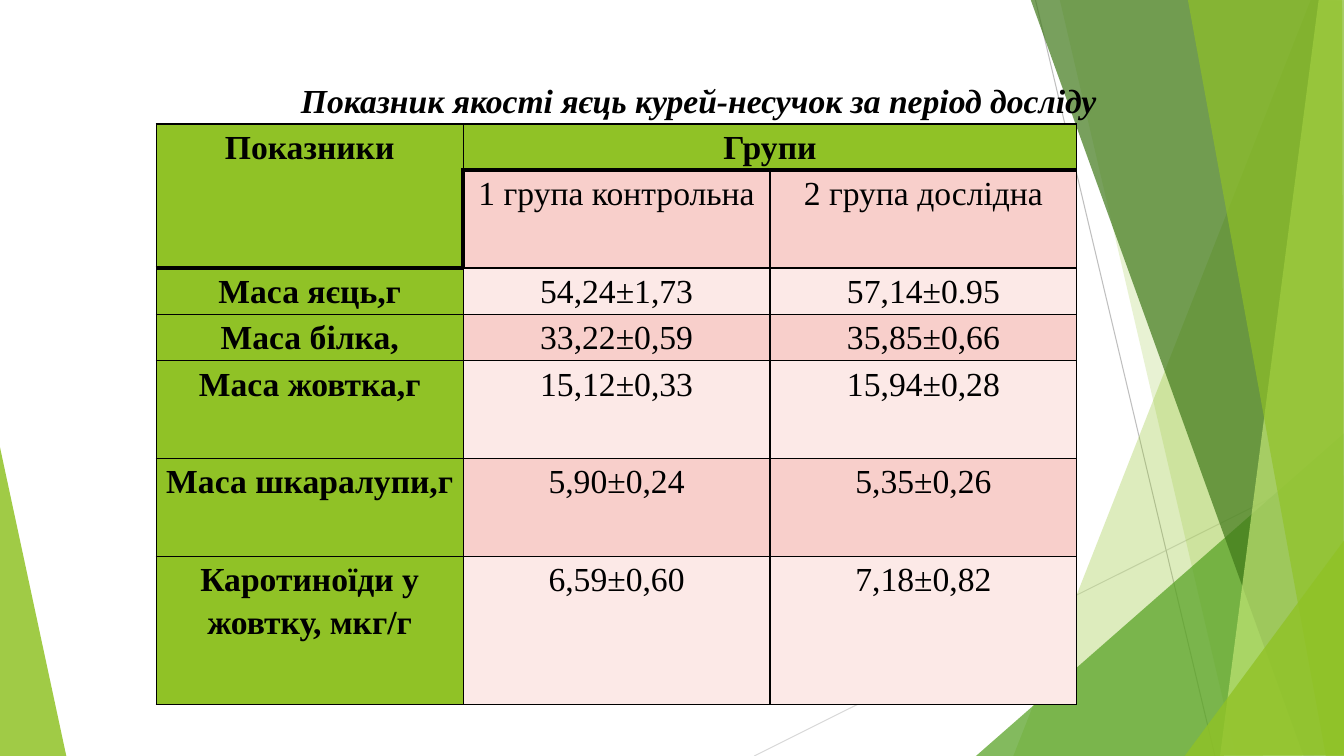
from lxml import etree
from pptx import Presentation
from pptx.dml.color import RGBColor
from pptx.enum.shapes import MSO_CONNECTOR
from pptx.enum.text import MSO_ANCHOR, MSO_AUTO_SIZE, PP_ALIGN
from pptx.oxml import parse_xml
from pptx.oxml.ns import nsdecls, qn
from pptx.util import Inches, Pt

BLACK = RGBColor(0x00, 0x00, 0x00)
LIME = RGBColor(0x90, 0xC2, 0x26)
GREEN = RGBColor(0x54, 0xA0, 0x21)
DARK_GREEN = RGBColor(0x3F, 0x78, 0x19)
PALE_LIME = RGBColor(0xC0, 0xE4, 0x74)
PINK = RGBColor(0xF8, 0xCF, 0xCB)
PALE_PINK = RGBColor(0xFC, 0xE9, 0xE7)
LIGHT_GREY = RGBColor(0xD9, 0xD9, 0xD9)
GREY = RGBColor(0xBF, 0xBF, 0xBF)
FONT = {"name": "Times New Roman", "size": Pt(24)}

deck = Presentation()
deck.slide_width, deck.slide_height = Inches(13.33), Inches(7.5)
page = deck.slides.add_slide(deck.slide_layouts[5])


def add_facet(points, color, opacity):
    corners = [(Inches(x), Inches(y)) for x, y in points]
    builder = page.shapes.build_freeform(*corners[0])
    builder.add_line_segments(corners[1:], close=True)
    facet = builder.convert_to_shape()
    facet.shadow.inherit = False
    facet.line.fill.background()
    facet.fill.solid()
    facet.fill.fore_color.rgb = color
    tint = facet.element.spPr.find(qn("a:solidFill"))[0]
    etree.SubElement(tint, qn("a:alpha"), val=str(opacity * 1000))


def style_text(frame, text, **style):
    para = frame.paragraphs[0]
    para.alignment = PP_ALIGN.CENTER
    span = para.add_run()
    span.text = text
    span.font.color.rgb = BLACK
    for name, value in {**FONT, **style}.items():
        setattr(span.font, name, value)
    return para


# Left facet and the thin lines behind the right-hand facets
add_facet([(-0.01, 4.39), (0.66, 7.51), (-0.01, 7.5)], LIME, 85)
for x1, y1, x2, y2, color in [
    (7.48, 7.5, 13.35, 4.57, LIGHT_GREY),
    (10.27, 0, 12.05, 7.5, GREY),
]:
    ray = page.shapes.add_connector(
        MSO_CONNECTOR.STRAIGHT, Inches(x1), Inches(y1), Inches(x2), Inches(y2))
    ray.line.color.rgb = color
    ray.line.width = Pt(0.75)
    etree.SubElement(ray.element.spPr, qn("a:effectLst"))

# Right-hand facets
for points, color, opacity in [
    ([(13, 0), (10.05, 7.5), (13.36, 7.51), (13.35, 0.01)], LIME, 30),
    ([(10.51, -0.01), (12.26, 7.5), (13.35, 7.5), (13.35, -0.01)], LIME, 20),
    ([(9.68, 7.5), (13.34, 4.29), (13.34, 7.5)], GREEN, 72),
    ([(10.22, -0.01), (12.93, 7.5), (13.35, 7.49), (13.35, -0.01)], DARK_GREEN, 70),
    ([(13.08, -0.01), (12.1, 7.5), (13.35, 7.5), (13.34, -0.01)], PALE_LIME, 70),
    ([(11.78, -0.01), (13.15, 7.5), (13.33, 7.5), (13.31, -0.01)], LIME, 65),
    ([(11.75, 7.5), (13.34, 5.35), (13.35, 7.49)], LIME, 80),
]:
    add_facet(points, color, opacity)

# Egg quality table
rows = [
    ("Показники", "Групи", ""),
    ("", "1 група контрольна", "2 група дослідна"),
    ("Маса яєць,г", "54,24±1,73", "57,14±0.95"),
    ("Маса білка,", "33,22±0,59", "35,85±0,66"),
    ("Маса жовтка,г", "15,12±0,33", "15,94±0,28"),
    ("Маса шкаралупи,г", "5,90±0,24", "5,35±0,26"),
    ("Каротиноїди у жовтку, мкг/г", "6,59±0,60", "7,18±0,82"),
]
heights = [0.46, 0.97, 0.46, 0.46, 0.97, 0.97, 1.47]
THICK_EDGES = {
    (0, 0, "B"), (0, 1, "B"), (0, 2, "B"), (1, 0, "B"), (1, 0, "R"),
    (1, 1, "L"), (1, 1, "T"), (1, 2, "T"), (2, 0, "T"),
}
CELL_FORMAT = {
    "margin_left": Inches(0.07), "margin_right": Inches(0.07),
    "margin_top": 0, "margin_bottom": 0, "vertical_anchor": MSO_ANCHOR.TOP,
}
table = page.shapes.add_table(
    len(rows), 3, Inches(1.55), Inches(1.23), Inches(9.13), Inches(sum(heights))).table
table.first_row = table.horz_banding = False
for column in table.columns:
    column.width = Inches(9.13 / 3)
for row, height in zip(table.rows, heights):
    row.height = Inches(height)
table.cell(0, 0).merge(table.cell(1, 0))
table.cell(0, 1).merge(table.cell(0, 2))

for r, texts in enumerate(rows):
    for c, text in enumerate(texts):
        cell = table.cell(r, c)
        for name, value in CELL_FORMAT.items():
            setattr(cell, name, value)
        for side in "LRTB":
            width = Pt(3 if (r, c, side) in THICK_EDGES else 1)
            cell._tc.get_or_add_tcPr().append(parse_xml(
                f'<a:ln{side} {nsdecls("a")} w="{width}"><a:solidFill>'
                f'<a:srgbClr val="{BLACK}"/></a:solidFill></a:ln{side}>'))
        is_header = r == 0 or c == 0
        cell.fill.solid()
        cell.fill.fore_color.rgb = LIME if is_header else PINK if r % 2 else PALE_PINK
        if text:
            para = style_text(cell.text_frame, text, bold=is_header)
            para.line_spacing = 1.15

# Title, brought in front of the facets
title = page.shapes.title
title.left, title.top = Inches(2.79), Inches(0.33)
title.width, title.height = Inches(8.28), Inches(0.91)
frame = title.text_frame
frame.word_wrap = False
frame.auto_size = MSO_AUTO_SIZE.NONE
frame.vertical_anchor = MSO_ANCHOR.BOTTOM
style_text(frame, "Показник якості яєць курей-несучок за період досліду", bold=True, italic=True)
title.element.getparent().append(title.element)

deck.save("out.pptx")
